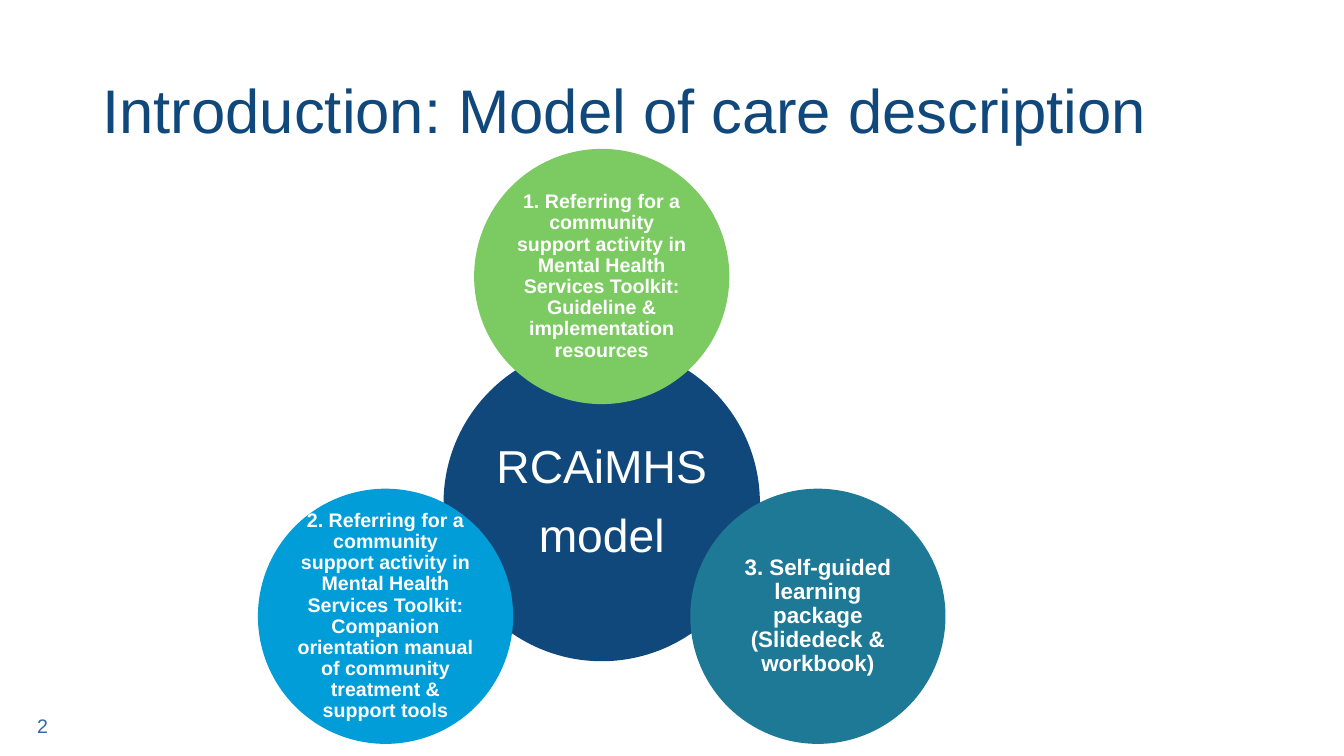
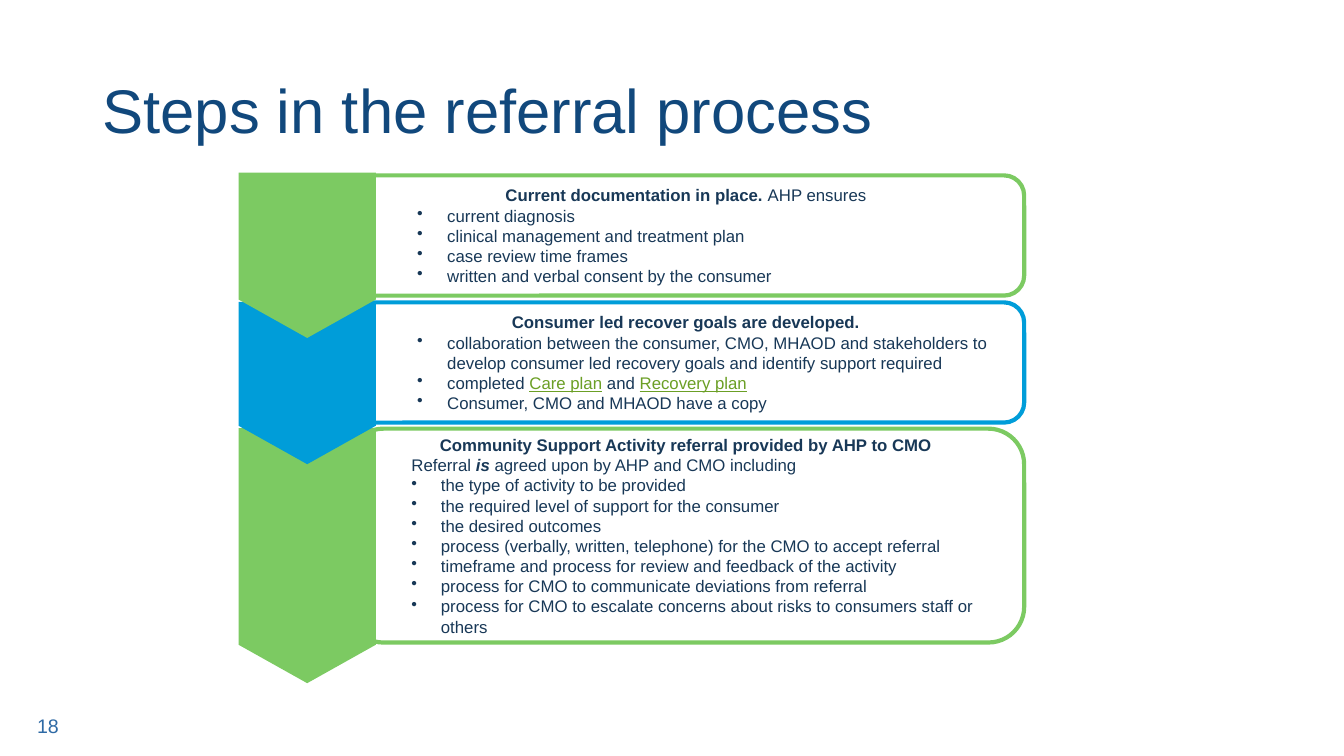
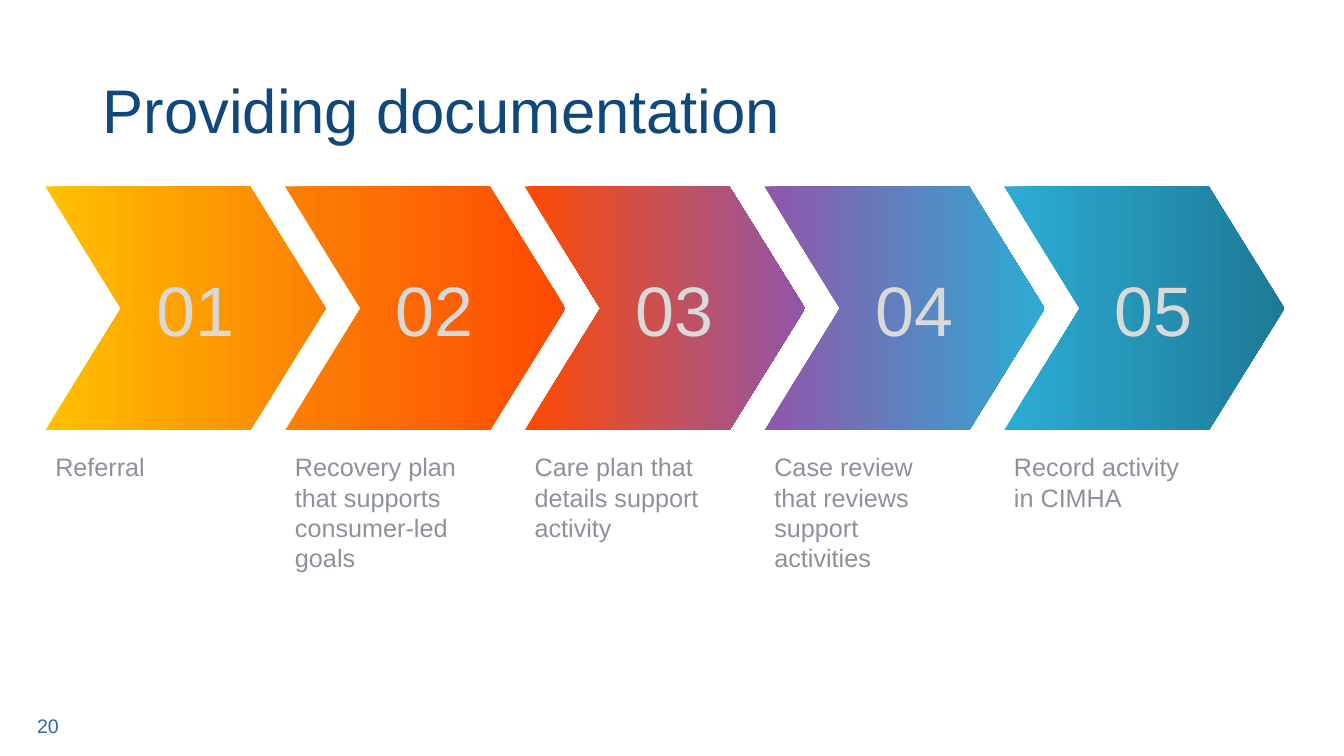
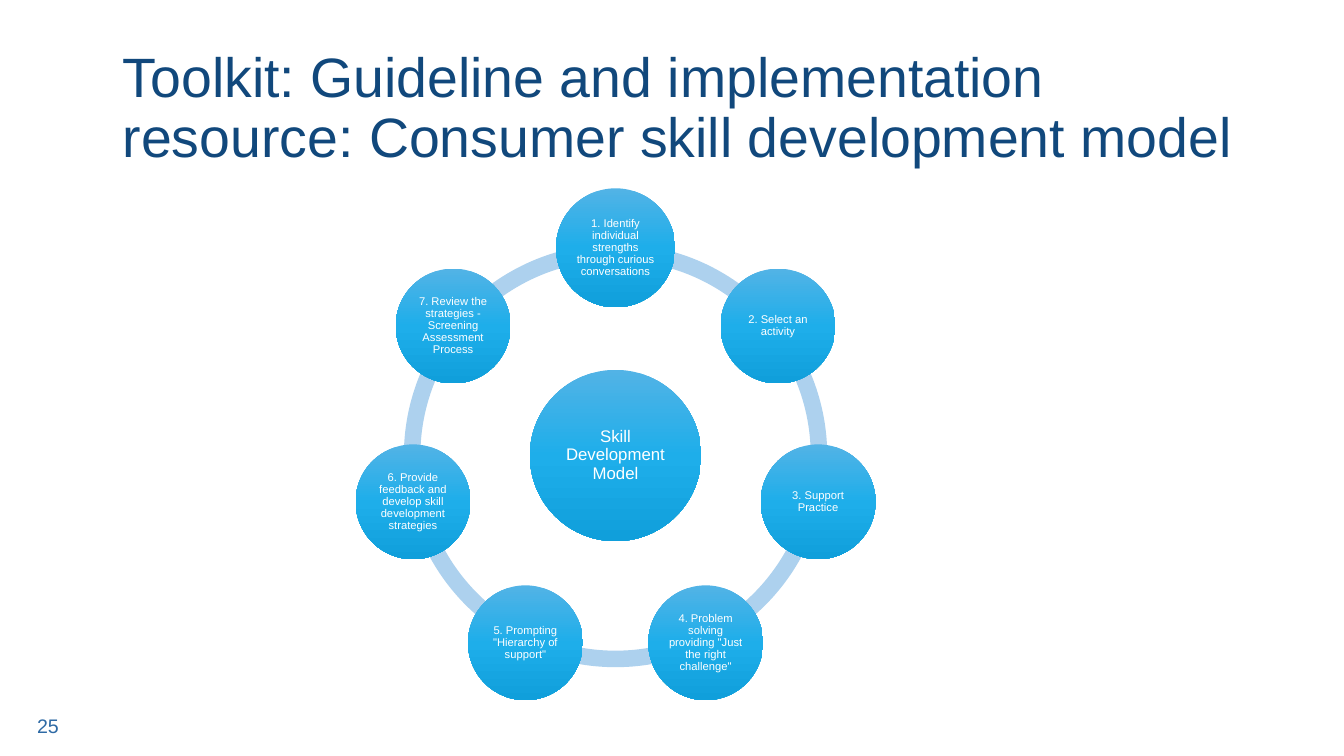
import math

import pptx
import pptx.dml.color
import pptx.enum.shapes
import pptx.enum.text
import pptx.oxml.ns
import pptx.util
from lxml import etree

Pt = pptx.util.Pt
qn = pptx.oxml.ns.qn
SHAPE = pptx.enum.shapes.MSO_SHAPE
ALIGN = pptx.enum.text.PP_ALIGN
ANCHOR = pptx.enum.text.MSO_ANCHOR

NAVY, GREEN, BLUE, TEAL = "11487C", "7CCA62", "009DD9", "1E7996"
INK, LINK, GREY, PALE, RING = "183857", "6B9F25", "8C919A", "D9D9D9", "ADD1EE"
FOOTER, WHITE = "2E6AA5", "FFFFFF"
GLOSS = ["52B3E6", "1EAEEA", "109FDB"]


def rgb(value):
    return pptx.dml.color.RGBColor.from_string(value)


def orbit(cx, cy, rx, ry, count):
    """Centres of evenly spaced items, clockwise from the top."""
    for i in range(count):
        angle = 2 * math.pi * i / count
        yield cx + rx * math.sin(angle), cy - ry * math.cos(angle)


class Deck:
    font = "Arial"

    def __init__(self):
        self.prs = pptx.Presentation()
        self.prs.slide_width, self.prs.slide_height = Pt(960), Pt(540)

    def slide(self, title, number, left=66.2, top=28.8, size=44):
        self.s = self.prs.slides.add_slide(self.prs.slide_layouts[6])
        self.text(left, top, 828, 104.4, title, size, NAVY,
                  anchor=ANCHOR.MIDDLE, spacing=0.9)
        self.text(19.4, 504, 73.4, 28.8, str(number), 14, FOOTER,
                  anchor=ANCHOR.MIDDLE)

    def text(self, x, y, w, h, content, size, color, anchor=ANCHOR.TOP, spacing=None):
        sp = self.s.shapes.add_textbox(Pt(x), Pt(y), Pt(w), Pt(h))
        self.frame(sp, anchor)
        self.para(sp, content, size, color, line_spacing=spacing)

    def frame(self, sp, anchor=ANCHOR.MIDDLE, inset=None):
        tf = sp.text_frame
        tf.word_wrap, tf.vertical_anchor = True, anchor
        if inset is not None:
            for side in ("left", "top", "right", "bottom"):
                setattr(tf, "margin_" + side, Pt(inset))

    def para(self, sp, content, size, color, bullet=False, indent=None, **formats):
        """Add a paragraph; content is a string or a list of (text, font values)."""
        tf = sp.text_frame
        p = tf.paragraphs[0]
        if p.runs:
            p = tf.add_paragraph()
        values = {"alignment": ALIGN.LEFT, **formats}
        for name, value in values.items():
            setattr(p, name, value)
        if indent:
            pPr = p._p.get_or_add_pPr()
            pPr.set("marL", str(Pt(indent[0])))
            pPr.set("indent", str(Pt(-indent[1])))
            if bullet:
                etree.SubElement(pPr, qn("a:buChar")).set("char", "•")
        runs = [(content, {})] if isinstance(content, str) else content
        for words, own in runs:
            r = p.add_run()
            r.text = words
            look = {"name": self.font, "size": Pt(size), "color": color, **own}
            r.font.color.rgb = rgb(look.pop("color"))
            for name, value in look.items():
                setattr(r.font, name, value)

    def shape(self, kind, x, y, w, h, fill=None, line=None, adj=None, angle=0):
        """Fill is a hex string, a list of gradient colours or None."""
        sp = self.s.shapes.add_shape(kind, Pt(x), Pt(y), Pt(w), Pt(h))
        sp.shadow.inherit = False
        if adj is not None:
            sp.adjustments[0] = adj
        if fill is None:
            sp.fill.background()
        elif isinstance(fill, str):
            sp.fill.solid()
            sp.fill.fore_color.rgb = rgb(fill)
        else:
            self.gradient(sp, fill, angle)
        if line:
            sp.line.color.rgb = rgb(line)
            sp.line.width = Pt(3)
        else:
            sp.line.fill.background()
        return sp

    def gradient(self, sp, colors, angle):
        sp.fill.gradient()
        grad = sp._element.spPr.find(qn("a:gradFill"))
        stops = grad.find(qn("a:gsLst"))
        for stop in list(stops):
            stops.remove(stop)
        for i, color in enumerate(colors):
            stop = etree.SubElement(stops, qn("a:gs"))
            stop.set("pos", str(100000 * i // (len(colors) - 1)))
            etree.SubElement(stop, qn("a:srgbClr")).set("val", color)
        grad.find(qn("a:lin")).set("ang", str(angle * 60000))

    def circle(self, cx, cy, diameter, lines, size, fill, inset=1, bold=False):
        sp = self.shape(SHAPE.OVAL, cx - diameter / 2, cy - diameter / 2,
                        diameter, diameter, fill, angle=90)
        self.frame(sp, inset=inset)
        for words in lines:
            self.para(sp, [(words, {"bold": bold})], size, WHITE,
                      alignment=ALIGN.CENTER, line_spacing=0.9,
                      space_after=Pt(round(size * 0.4)))

    def step(self, y, h, color, indent, heading, items):
        sp = self.shape(SHAPE.ROUNDED_RECTANGLE, 248.4, y, 483.2, h, None, color, 0.167)
        self.frame(sp, inset=2.9)
        self.para(sp, heading, 12, INK, alignment=ALIGN.CENTER)
        for item, bullet in items:
            self.para(sp, item, 12, INK, bullet, indent)

    def down_arrow(self, cx, y, width, length, color):
        sp = self.shape(SHAPE.PENTAGON, cx - length / 2, y + (length - width) / 2,
                        length, width, color, adj=0.28)
        sp.rotation = 90


def model_slide(d):
    d.slide("Introduction: Model of care description", 2)
    cx, cy = 429.8, 359.3
    d.circle(cx, cy, 226, ["RCAiMHS", "model"], 33, NAVY, inset=3.6)
    toolkit = "Referring for a community support activity in Mental Health Services Toolkit: "
    parts = [
        ("1. " + toolkit + "Guideline & implementation resources", 14, GREEN),
        ("3. Self-guided learning package (Slidedeck & workbook)", 16, TEAL),
        ("2. " + toolkit + "Companion orientation manual of community "
         "treatment & support tools", 14, BLUE),
    ]
    for (x, y), (words, size, color) in zip(orbit(cx, cy, 178.3, 161.8, 3), parts):
        d.circle(x, y, 182.3, [words], size, color, inset=1.4, bold=True)


def steps_slide(d):
    d.slide("Steps in the referral process", 18)
    bold = {"bold": True}
    link = {"color": LINK, "underline": True}
    # Outlined boxes: top, height, colour, indent, heading, items
    steps = [
        (125.3, 85.9, GREEN, (64, 21.5),
         [("Current documentation in place. ", bold), ("AHP ensures", {})],
         [("current diagnosis", True),
          ("clinical management and treatment plan", True),
          ("case review time frames", True),
          ("written and verbal consent by the consumer", True)]),
        (216, 85.9, BLUE, (64, 21.5),
         [("Consumer led recover goals are developed.", bold)],
         [("collaboration between the consumer, CMO, MHAOD and stakeholders to "
           "develop consumer led recovery goals and identify support required", True),
          ([("completed ", {}), ("Care plan", link), (" and ", {}),
            ("Recovery plan", link)], True),
          ("Consumer, CMO and MHAOD have a copy", True)]),
        (306.2, 152.8, GREEN, (56.2, 21),
         [("Community Support Activity referral provided by AHP to CMO", bold)],
         [([("Referral ", {}), ("is", {"bold": True, "italic": True}),
            (" agreed upon by AHP and CMO including", {})], False),
          ("the type of activity to be provided", True),
          ("the required level of support for the consumer", True),
          ("the desired outcomes", True),
          ("process (verbally, written, telephone) for the CMO to accept referral", True),
          ("timeframe and process for review and feedback of the activity", True),
          ("process for CMO to communicate deviations from referral", True),
          ("process for CMO to escalate concerns about risks to consumers staff or others",
           True)]),
    ]
    for step in steps:
        d.step(*step)
    # Arrows overlap downwards, so the lowest is drawn first
    for y, length, color in [(305.8, 182.2, GREEN), (215.6, 116, BLUE), (123.4, 118, GREEN)]:
        d.down_arrow(219.4, y, 98, length, color)


def documentation_slide(d):
    d.slide("Providing documentation", 20)
    colors = ["FFC000", "FC8004", "FE4A02", "9056AA", "2CACD4", TEAL]
    labels = ["Referral", "Recovery plan that supports consumer-led goals",
              "Care plan that details support activity",
              "Case review that reviews support activities", "Record activity in CIMHA"]
    for i, label in enumerate(labels):
        x = 32.4 + 171.2 * i
        sp = d.shape(SHAPE.CHEVRON, x, 133.2, 200.2, 174.2, colors[i:i + 2], adj=0.31)
        d.frame(sp)
        sp.text_frame.margin_left = Pt(21)
        d.para(sp, f"{i + 1:02}", 50, PALE, alignment=ALIGN.CENTER)
        d.text(x, 319, 145.4, 92.2, label, 18, GREY)


def skills_slide(d):
    d.slide("Toolkit: Guideline and implementation resource: Consumer skill "
            "development model", 25, 80.6, 25.9, 39.6)
    cx, cy, ring = 439.7, 325.4, 302.4
    d.shape(SHAPE.DONUT, cx - ring / 2, cy - ring / 2, ring, ring, RING, adj=0.039)
    d.circle(cx, cy, 122.4, ["Skill Development Model"], 12, GLOSS, inset=1.4)
    stages = ["Identify individual strengths through curious conversations",
              "Select an activity", "Support Practice",
              'Problem solving providing "Just the right challenge"',
              'Prompting "Hierarchy of support"',
              "Provide feedback and develop skill development strategies",
              "Review the strategies - Screening Assessment Process"]
    centres = orbit(cx, cy, 148.4, 148.4, len(stages))
    for n, ((x, y), stage) in enumerate(zip(centres, stages), 1):
        d.circle(x, y, 85 if n == 1 else 82, [f"{n}. {stage}"], 8, GLOSS, inset=0.7)


def main():
    d = Deck()
    for build in (model_slide, steps_slide, documentation_slide, skills_slide):
        build(d)
    d.prs.save("out.pptx")


if __name__ == "__main__":
    main()
